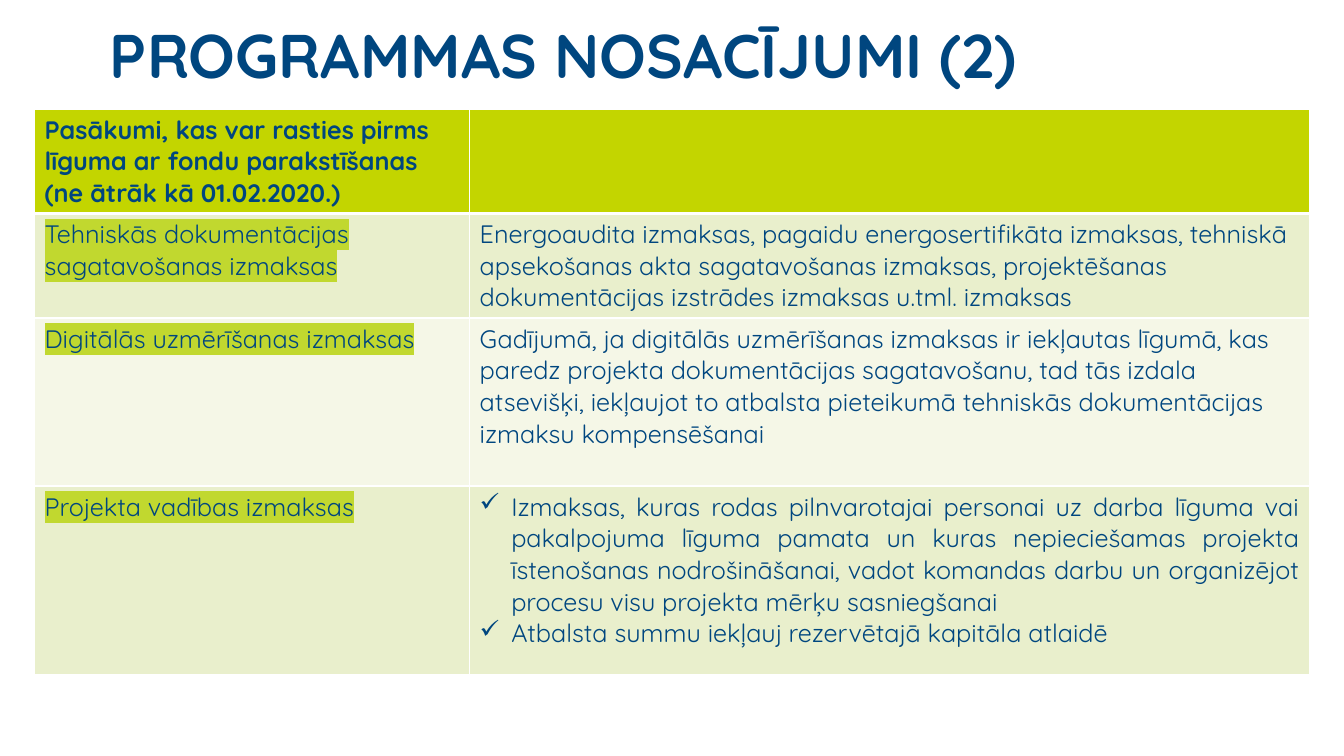
from dataclasses import dataclass

from lxml.etree import SubElement as Sub
from pptx import Presentation
from pptx.dml.color import RGBColor as Rgb
from pptx.enum.text import MSO_ANCHOR as Anchor, PP_ALIGN as Align
from pptx.oxml.ns import qn
from pptx.util import Pt


@dataclass(frozen=True)
class Theme:
    font: str = "Quicksand"
    ink: str = "00467F"
    line: str = "FFFFFF"
    head: str = "C3D500"
    mark: str = "C1D82F"
    bands: tuple = ("E9EFCC", "F5F7E7")
    title: int = 44
    body: int = 18


class Deck:
    def __init__(self, theme):
        self.theme = theme
        self.prs = Presentation()
        self.prs.slide_width = Pt(960)
        self.prs.slide_height = Pt(540)
        self.slide = self.prs.slides.add_slide(self.prs.slide_layouts[6])

    def run(self, para, text, size, bold=False, mark=None):
        run = para.add_run()
        run.text = text
        font = run.font
        font.size = Pt(size)
        font.bold = bold
        font.color.rgb = Rgb.from_string(self.theme.ink)
        if mark:
            glow = Sub(run._r.get_or_add_rPr(), qn("a:highlight"))
            Sub(glow, qn("a:srgbClr"), val=mark)
        font.name = self.theme.font

    def title(self, text, left, top, width, height):
        box = self.slide.shapes.add_textbox(Pt(left), Pt(top), Pt(width), Pt(height))
        frame = box.text_frame
        frame.word_wrap = True
        frame.vertical_anchor = Anchor.MIDDLE
        para = frame.paragraphs[0]
        para.line_spacing = 0.9
        self.run(para, text, self.theme.title, True)

    def bullet(self, para):
        props = para._p.get_or_add_pPr()
        props.set("marL", str(Pt(22.5)))
        props.set("indent", str(-Pt(22.5)))
        Sub(props, qn("a:buChar"), char="✓")

    def border(self, cell, base):
        props = cell._tc.get_or_add_tcPr()
        for side, width in (("L", 1), ("R", 1), ("T", 1), ("B", base)):
            line = Sub(props, qn(f"a:ln{side}"), w=str(Pt(width)))
            Sub(Sub(line, qn("a:solidFill")), qn("a:srgbClr"), val=self.theme.line)

    def cell(self, cell, texts, fill, head, mark):
        self.border(cell, 3 if head else 1)
        cell.fill.solid()
        cell.fill.fore_color.rgb = Rgb.from_string(fill)
        frame = cell.text_frame
        for num, text in enumerate(texts):
            para = frame.add_paragraph() if num else frame.paragraphs[0]
            if len(texts) > 1:
                para.alignment = Align.JUSTIFY
                self.bullet(para)
            self.run(para, text, self.theme.body, head, mark)

    def table(self, rows, left, top, widths, heights):
        shape = self.slide.shapes.add_table(
            len(rows), len(widths), Pt(left), Pt(top), Pt(sum(widths)), Pt(sum(heights)))
        table = shape.table
        table.horz_banding = False
        for col, width in zip(table.columns, widths):
            col.width = Pt(width)
        for num, (row, height) in enumerate(zip(rows, heights)):
            table.rows[num].height = Pt(height)
            head = num == 0
            fill = self.theme.head if head else self.theme.bands[(num - 1) % 2]
            for col, texts in enumerate(row):
                mark = None if head or col else self.theme.mark
                self.cell(table.cell(num, col), texts, fill, head, mark)


ROWS = [
    (["Pasākumi, kas var rasties pirms līguma ar fondu parakstīšanas (ne ātrāk kā 01.02.2020.)"], []),
    (["Tehniskās dokumentācijas sagatavošanas izmaksas"],
     ["Energoaudita izmaksas, pagaidu energosertifikāta izmaksas, tehniskā apsekošanas akta "
      "sagatavošanas izmaksas, projektēšanas dokumentācijas izstrādes izmaksas u.tml. izmaksas"]),
    (["Digitālās uzmērīšanas izmaksas"],
     ["Gadījumā, ja digitālās uzmērīšanas izmaksas ir iekļautas līgumā, kas paredz projekta "
      "dokumentācijas sagatavošanu, tad tās izdala atsevišķi, iekļaujot to atbalsta pieteikumā "
      "tehniskās dokumentācijas izmaksu kompensēšanai"]),
    (["Projekta vadības izmaksas"],
     ["Izmaksas, kuras rodas pilnvarotajai personai uz darba līguma vai pakalpojuma līguma "
      "pamata un kuras nepieciešamas projekta īstenošanas nodrošināšanai, vadot komandas darbu "
      "un organizējot procesu visu projekta mērķu sasniegšanai",
      "Atbalsta summu iekļauj rezervētajā kapitāla atlaidē"]),
]


def main():
    deck = Deck(Theme())
    deck.title("PROGRAMMAS NOSACĪJUMI (2)", 71.5, 13, 828, 57)
    deck.table(ROWS, 24.7, 77.8, (310.8, 599.7), (74.7, 74.7, 120, 134.6))
    deck.prs.save("out.pptx")


if __name__ == "__main__":
    main()
